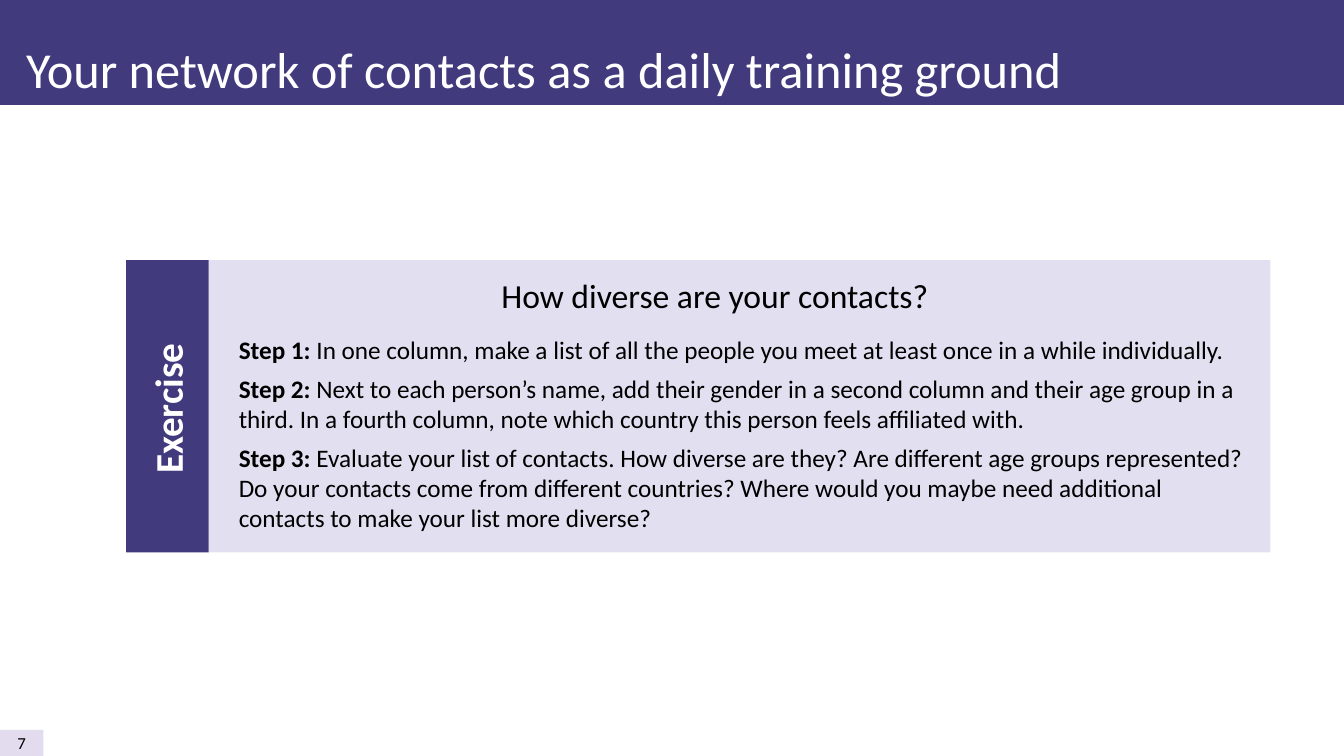
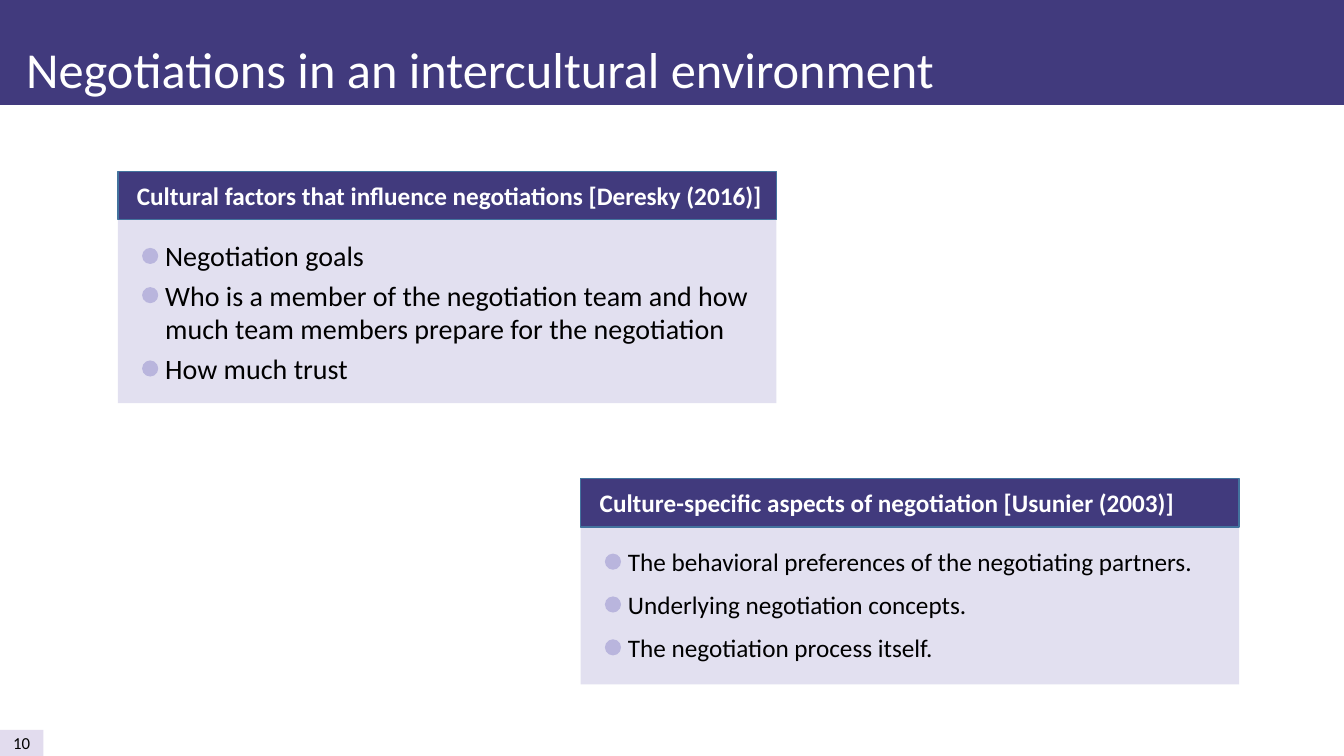
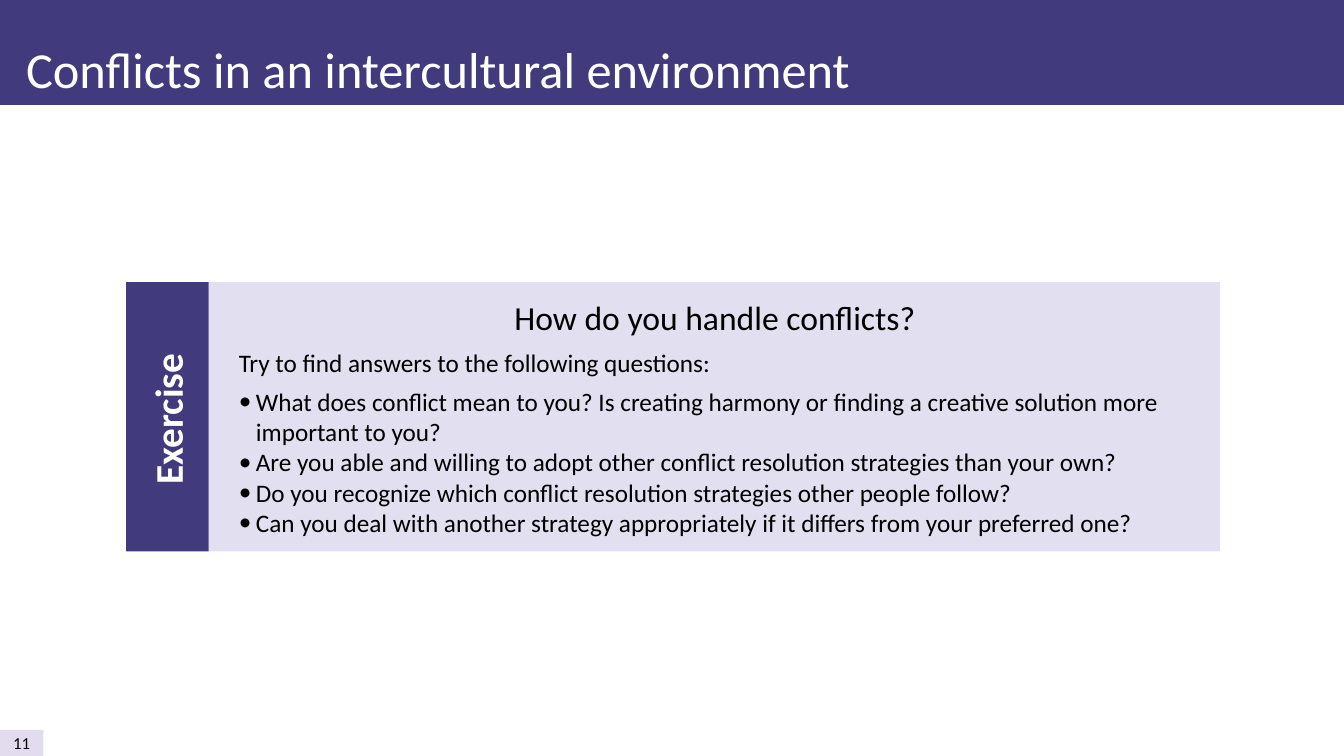
from lxml.etree import SubElement
from pptx import Presentation
from pptx.dml.color import RGBColor
from pptx.enum.shapes import MSO_SHAPE
from pptx.enum.text import MSO_ANCHOR, PP_ALIGN
from pptx.oxml.ns import qn
from pptx.util import Inches, Pt

FONT = "Calibri"
DARK, PALE, DOT, EDGE = "413A7D", "E2E0F0", "B9B5DD", "43739E"
PAGE, WHITE, BLACK = "E2DCEE", "FFFFFF", "000000"


def color(code):
    return RGBColor.from_string(code)


def add_mark(para, hang=0.17):
    """Give the paragraph a bullet and a hanging indent, in inches."""
    props = para._p.get_or_add_pPr()
    props.set("marL", str(Inches(hang)))
    props.set("indent", str(-Inches(hang)))
    SubElement(props, qn("a:buFont"), typeface=FONT)
    SubElement(props, qn("a:buChar"), char="•")


def write(frame, text, size=18, ink=BLACK, bold=False, align=PP_ALIGN.LEFT,
          after=0, marks=()):
    """Fill a frame; a (lead, rest) pair has a bold lead, marks are bulleted."""
    frame.word_wrap = True
    items = [text] if isinstance(text, str) else list(text)
    for num, item in enumerate(items + list(marks)):
        para = frame.paragraphs[0] if num == 0 else frame.add_paragraph()
        para.alignment = align
        marked = num >= len(items)
        para.space_after = Pt(0 if marked else after)
        if marked:
            add_mark(para)
        parts = [(item, bold)] if isinstance(item, str) else zip(item, (True, False))
        for words, heavy in parts:
            run = para.add_run()
            run.text = words
            font = run.font
            font.name, font.size, font.bold = FONT, Pt(size), heavy
            font.color.rgb = color(ink)


class Deck:
    def __init__(self):
        self.show = Presentation()
        self.show.slide_width = Inches(13.33)
        self.show.slide_height = Inches(7.5)
        self.slide = None

    def start(self, title, page):
        """Add a slide with its page number, title band and title."""
        self.slide = self.show.slides.add_slide(self.show.slide_layouts[6])
        tag = self.block(0, 7.24, 0.43, 0.26, PAGE)
        tag.text_frame.vertical_anchor = MSO_ANCHOR.MIDDLE
        write(tag.text_frame, str(page), size=12, align=PP_ALIGN.CENTER)
        self.block(0, -0.01, 13.34, 1.05, DARK)
        self.text(0.16, 0.33, 13, 0.71, title, size=36, ink=WHITE)

    def block(self, x, y, wide, high, fill, line=None, kind=MSO_SHAPE.RECTANGLE):
        shape = self.slide.shapes.add_shape(
            kind, Inches(x), Inches(y), Inches(wide), Inches(high))
        shape.shadow.inherit = False
        shape.fill.solid()
        shape.fill.fore_color.rgb = color(fill)
        if line:
            shape.line.color.rgb = color(line)
            shape.line.width = Pt(1)
        else:
            shape.line.fill.background()
        return shape

    def text(self, x, y, wide, high, words, **style):
        box = self.slide.shapes.add_textbox(
            Inches(x), Inches(y), Inches(wide), Inches(high))
        write(box.text_frame, words, **style)
        return box

    def task(self, y, wide, high, head, drop, words, **style):
        """Draw an exercise; drop is the distance from its top to the words."""
        left, tab = 1.25, 0.82
        body = left + tab
        self.block(body, y, wide, high, PALE)
        self.text(body + 0.21, y + 0.1, 9.62, 0.5, head, size=24,
                  align=PP_ALIGN.CENTER)
        self.block(left, y, tab, high, DARK)
        long, deep = 1.54, 0.57
        label = self.text(left + (tab - long) / 2, y + (high - deep) / 2,
                          long, deep, "Exercise", size=28, ink=WHITE, bold=True)
        label.rotation = 270
        self.text(body + 0.2, y + drop, wide - 0.33, high - drop - 0.1,
                  words, **style)

    def panel(self, x, y, high, head, rows, size, gap):
        """Draw a headed list of (words, number of lines) rows."""
        wide, dot = 6.53, 0.16
        self.block(x, y, wide, high, PALE)
        self.block(x, y, wide, 0.48, DARK, line=EDGE)
        self.text(x + 0.09, y + 0.04, wide, 0.4, head, ink=WHITE, bold=True)
        line = size * 1.22 / 72
        top = y + 0.62
        for words, lines in rows:
            self.text(x + 0.37, top, 6.04, lines * line + 0.1, words, size=size)
            self.block(x + 0.24, top + 0.05 + (line - dot) / 2, dot, dot, DOT,
                       kind=MSO_SHAPE.OVAL)
            top += lines * line + gap


def main():
    deck = Deck()

    deck.start("Your network of contacts as a daily training ground", 7)
    deck.task(2.58, 10.53, 2.9, "How diverse are your contacts?", 0.69, [
        ("Step 1: ", "In one column, make a list of all the people you meet "
                     "at least once in a while individually."),
        ("Step 2: ", "Next to each person’s name, add their gender in a second "
                     "column and their age group in a third. In a fourth column, "
                     "note which country this person feels affiliated with."),
        ("Step 3: ", "Evaluate your list of contacts. How diverse are they? "
                     "Are different age groups represented? Do your contacts come "
                     "from different countries? Where would you maybe need "
                     "additional contacts to make your list more diverse?"),
    ], after=6)

    deck.start("Negotiations in an intercultural environment", 10)
    deck.panel(1.17, 1.7, 2.3,
               "Cultural factors that influence negotiations [Deresky (2016)]", [
                   ("Negotiation goals", 1),
                   ("Who is a member of the negotiation team and how "
                    "much team members prepare for the negotiation", 2),
                   ("How much trust", 1),
               ], size=20, gap=0.05)
    deck.panel(5.76, 4.75, 2.04,
               "Culture-specific aspects of negotiation [Usunier (2003)]", [
                   ("The behavioral preferences of the negotiating partners.", 1),
                   ("Underlying negotiation concepts.", 1),
                   ("The negotiation process itself.", 1),
               ], size=18, gap=0.12)

    deck.start("Conflicts in an intercultural environment", 11)
    deck.task(2.8, 10.03, 2.67, "How do you handle conflicts?", 0.6,
              "Try to find answers to the following questions:", after=6, marks=[
                  "What does conflict mean to you? Is creating harmony or finding "
                  "a creative solution more important to you?",
                  "Are you able and willing to adopt other conflict resolution "
                  "strategies than your own?",
                  "Do you recognize which conflict resolution strategies other "
                  "people follow?",
                  "Can you deal with another strategy appropriately if it differs "
                  "from your preferred one?",
              ])

    deck.show.save("out.pptx")


if __name__ == "__main__":
    main()
